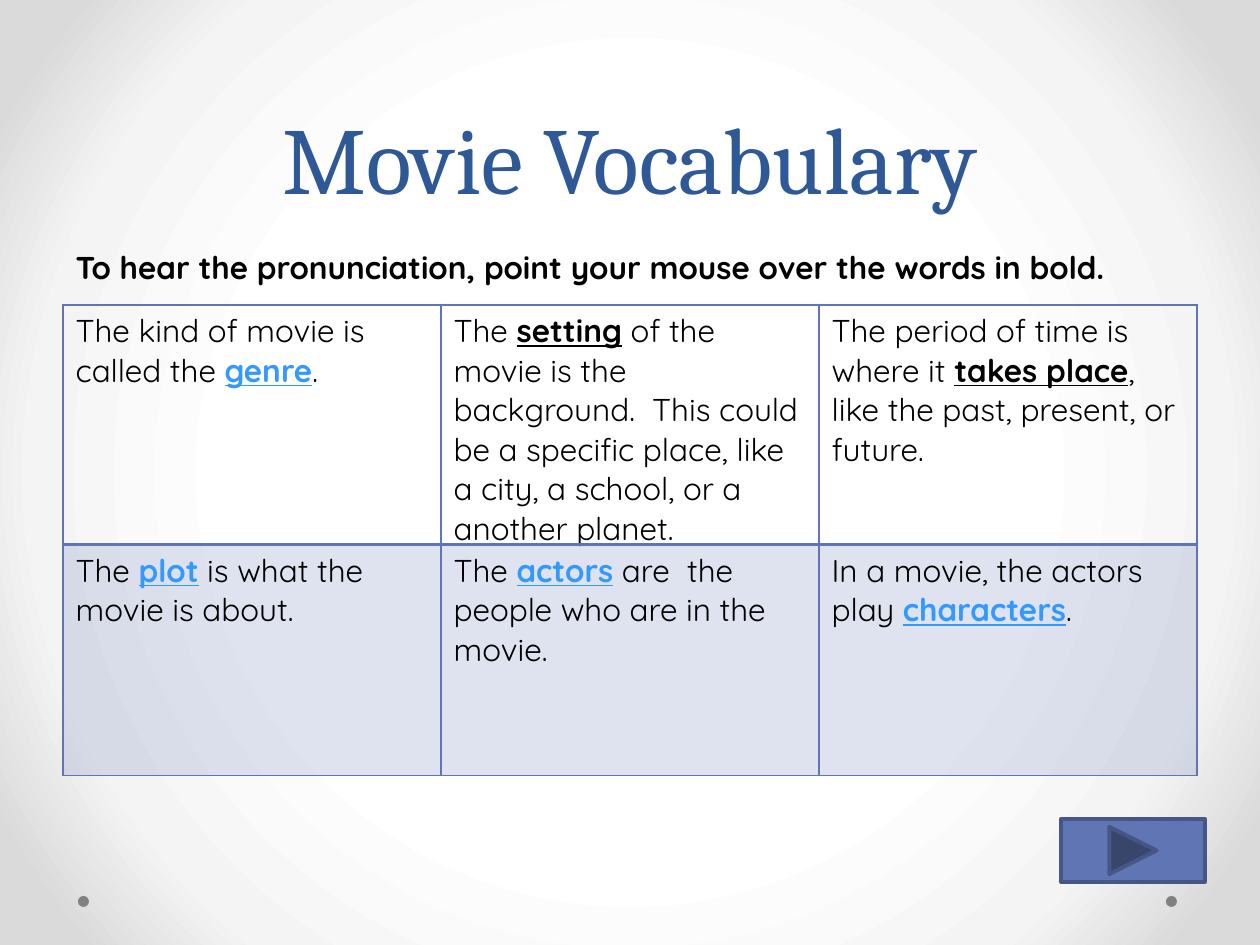
from lxml import etree
from pptx import Presentation
from pptx.dml.color import RGBColor
from pptx.enum.shapes import MSO_SHAPE
from pptx.enum.text import MSO_ANCHOR, PP_ALIGN
from pptx.oxml import parse_xml
from pptx.oxml.ns import qn
from pptx.util import Emu, Pt

OVAL = MSO_SHAPE.OVAL
NEXT_BUTTON = MSO_SHAPE.ACTION_BUTTON_FORWARD_OR_NEXT
CENTER, BOTTOM = PP_ALIGN.CENTER, MSO_ANCHOR.BOTTOM

BLACK = RGBColor(0x00, 0x00, 0x00)
NAVY = RGBColor(0x2F, 0x58, 0x97)
SKY = RGBColor(0x33, 0x99, 0xFF)
PERIWINKLE = RGBColor(0x60, 0x76, 0xB4)
SLATE = RGBColor(0x47, 0x57, 0x85)
GRAY = RGBColor(0x80, 0x80, 0x80)

# Content: each cell is (text before, key word, word colour, text after)
TITLE = "Movie Vocabulary"
HINT = "To hear the pronunciation, point your mouse over the words in bold."
VOCABULARY = [
    [
        ("The kind of movie is called the ", "genre", SKY, "."),
        ("The ", "setting", BLACK,
         " of the movie is the background.  This could be a specific place, "
         "like a city, a school, or a another planet."),
        ("The period of time is where it ", "takes place", BLACK,
         ", like the past, present, or future."),
    ],
    [
        ("The ", "plot", SKY, " is what the movie is about."),
        ("The ", "actors", SKY, " are  the people who are in the movie."),
        ("In a movie, the actors play ", "characters", SKY, "."),
    ],
]
BACKGROUND_STOPS = [(50, "FFFFFF"), (76, "F4F4F4"), (92, "DADADA")]
NO_TABLE_STYLE = "{2D5ABB26-0587-4C30-8999-92F81FD0307C}"
DRAWING = "http://schemas.openxmlformats.org/drawingml/2006/main"
BODY = {"name": "Quicksand", "size": Pt(18)}


def px(*lengths):
    return [Emu(round(length * 914400 / 126)) for length in lengths]


def add_span(para, text, color, **formats):
    span = para.add_run()
    span.text = text
    span.font.color.rgb = color
    for name, value in formats.items():
        setattr(span.font, name, value)


def add_plain_table(page, rows, columns, box):
    frame = page.shapes.add_table(rows, columns, *px(*box))
    table = frame.table
    table.first_row = table.horz_banding = False
    table._tbl.tblPr.find(qn("a:tableStyleId")).text = NO_TABLE_STYLE
    return table


def add_borders(cell, widths):
    properties = cell._tc.get_or_add_tcPr()
    for side, width in widths.items():
        line = etree.SubElement(properties, qn(f"a:ln{side}"), w=str(Pt(width)))
        fill = etree.SubElement(line, qn("a:solidFill"))
        etree.SubElement(fill, qn("a:srgbClr"), val=str(PERIWINKLE))


def add_filled_shape(page, kind, box, color):
    shape = page.shapes.add_shape(kind, *px(*box))
    shape.shadow.inherit = False
    shape.fill.solid()
    shape.fill.fore_color.rgb = color
    return shape


def paint_background(page):
    page.background.fill.solid()
    solid = page.background._cSld.bg.bgPr.find(qn("a:solidFill"))
    stops = "".join(
        f'<a:gs pos="{position * 1000}"><a:srgbClr val="{color}"/></a:gs>'
        for position, color in BACKGROUND_STOPS)
    gradient = parse_xml(
        f'<a:gradFill xmlns:a="{DRAWING}" rotWithShape="1">'
        f'<a:gsLst>{stops}</a:gsLst><a:path path="circle">'
        '<a:fillToRect l="50000" t="50000" r="50000" b="50000"/>'
        '</a:path></a:gradFill>')
    solid.getparent().replace(solid, gradient)


def main():
    deck = Presentation()
    deck.slide_width, deck.slide_height = px(1260, 945)
    page = deck.slides.add_slide(deck.slide_layouts[6])
    paint_background(page)

    # Corner dots
    for left in (1166, 78):
        dot = add_filled_shape(page, OVAL, (left, 896, 11, 11), GRAY)
        dot.line.fill.background()

    # Title
    box = page.shapes.add_textbox(*px(63, 0, 1134, 220)).text_frame
    box.word_wrap = True
    box.vertical_anchor = BOTTOM
    para = box.paragraphs[0]
    para.alignment = CENTER
    para.line_spacing = Pt(58)
    add_span(para, TITLE, NAVY, name="Cambria", size=Pt(54))

    # Vocabulary table: heavier line between the rows, second row tinted
    table = add_plain_table(page, 2, 3, (63, 305, 1134, 462))
    for row, entries in enumerate(VOCABULARY):
        for column, (before, word, color, after) in enumerate(entries):
            cell = table.cell(row, column)
            para = cell.text_frame.paragraphs[0]
            add_span(para, before, BLACK, **BODY)
            add_span(para, word, color, bold=True, underline=True, **BODY)
            add_span(para, after, BLACK, **BODY)
            add_borders(cell, {"L": 1, "R": 1, "T": 1 + row, "B": 2 - row})
            if row == 0:
                cell.fill.background()
                continue
            cell.fill.solid()
            cell.fill.fore_color.rgb = PERIWINKLE
            tint = cell._tc.tcPr.find(qn("a:solidFill"))[0]
            etree.SubElement(tint, qn("a:alpha"), val="20000")

    # Next button
    button = add_filled_shape(page, NEXT_BUTTON, (1061, 819, 144, 63), PERIWINKLE)
    button.line.color.rgb = SLATE
    button.line.width = Pt(2.25)

    # Hint above the table
    hint = add_plain_table(page, 1, 1, (63, 242, 1142, 52)).cell(0, 0)
    hint.fill.background()
    add_span(hint.text_frame.paragraphs[0], HINT, BLACK, bold=True, **BODY)

    deck.save("out.pptx")


if __name__ == "__main__":
    main()
